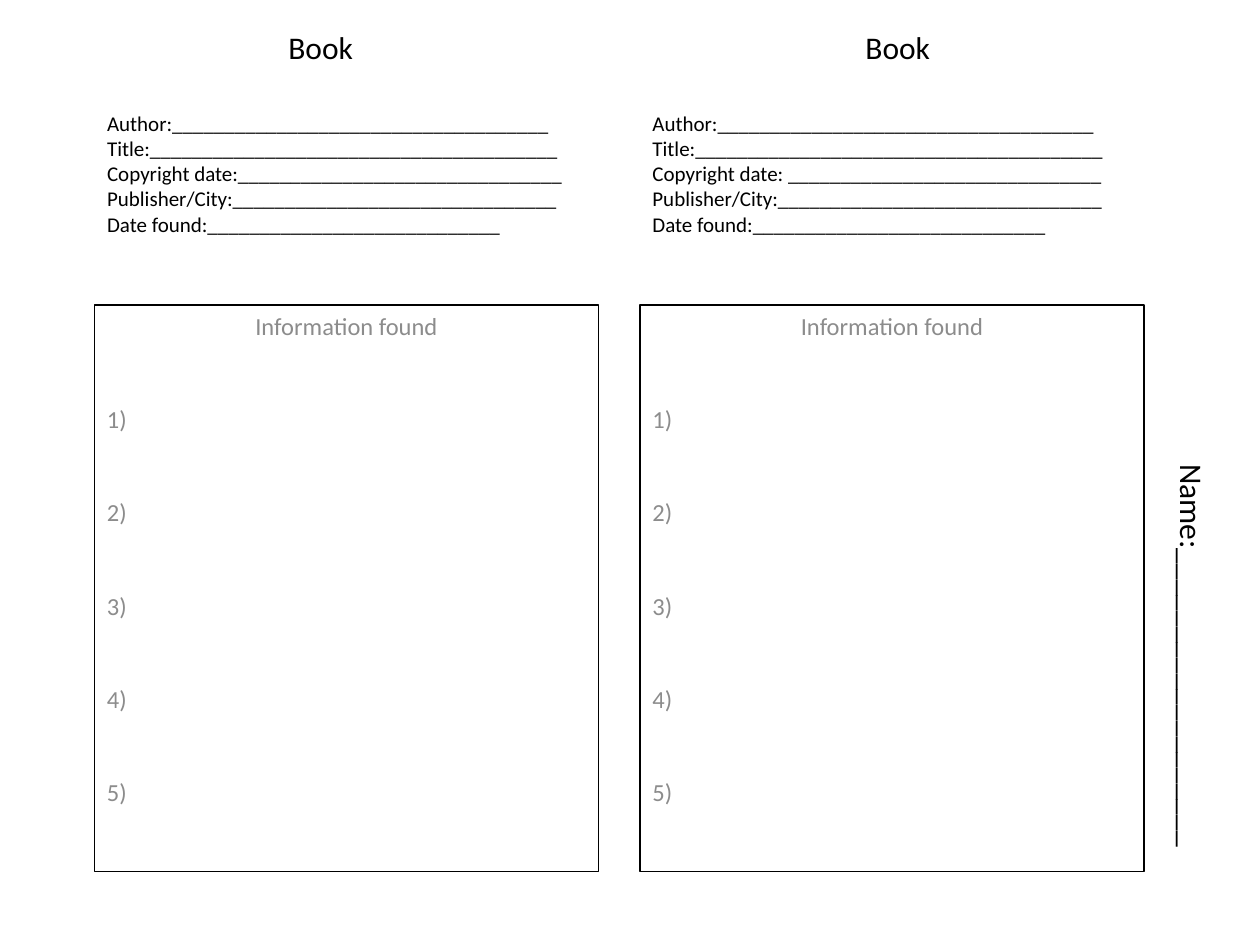
from pptx import Presentation
from pptx.dml.color import RGBColor
from pptx.enum.shapes import MSO_SHAPE
from pptx.enum.text import MSO_ANCHOR, MSO_AUTO_SIZE, PP_ALIGN
from pptx.util import Inches, Pt

BLACK = RGBColor(0x00, 0x00, 0x00)
GRAY = RGBColor(0x8C, 0x8C, 0x8C)
WHITE = RGBColor(0xFF, 0xFF, 0xFF)
FONT = "Calibri"

CARD_WIDTH = 4
FACT_COUNT = 5


def write_text(paragraph, text, size=12, color=BLACK, align=PP_ALIGN.LEFT,
               line_spacing=None, space_before=0):
    """Fill a paragraph; a line feed in the text becomes a line break."""
    paragraph.text = text.replace("\n", "\v")
    paragraph.alignment = align
    paragraph.space_before = Pt(space_before)
    if line_spacing:
        paragraph.line_spacing = line_spacing
    paragraph.font.name = FONT
    paragraph.font.size = Pt(size)
    paragraph.font.color.rgb = color


def source_fields(copyright_blank):
    """List the fill-in lines that identify a book."""
    return "\n".join([
        "Author:" + "_" * 36,
        "Title:" + "_" * 39,
        "Copyright date:" + copyright_blank,
        "Publisher/City:" + "_" * 31,
        "Date found:" + "_" * 28,
    ])


class Worksheet:
    """Holds the current slide and draws the worksheet parts on it."""

    def __init__(self, slide):
        self.slide = slide
        slide.background.fill.solid()
        slide.background.fill.fore_color.rgb = WHITE

    def text_box(self, text, left, top, width, height, rotation=0, **text_format):
        shape = self.slide.shapes.add_textbox(
            Inches(left), Inches(top), Inches(width), Inches(height))
        shape.rotation = rotation
        shape.text_frame.word_wrap = True
        write_text(shape.text_frame.paragraphs[0], text, **text_format)
        return shape

    def title(self, text, left, top, width, height):
        shape = self.slide.shapes.title
        shape.left, shape.top = Inches(left), Inches(top)
        shape.width, shape.height = Inches(width), Inches(height)
        shape.text_frame.auto_size = MSO_AUTO_SIZE.NONE
        shape.text_frame.vertical_anchor = MSO_ANCHOR.MIDDLE
        write_text(shape.text_frame.paragraphs[0], text)

    def information_box(self, left, top, width, height):
        shape = self.slide.shapes.add_shape(
            MSO_SHAPE.RECTANGLE, Inches(left), Inches(top), Inches(width), Inches(height))
        shape.shadow.inherit = False
        shape.fill.background()
        shape.line.color.rgb = BLACK
        shape.line.width = Pt(0.75)
        frame = shape.text_frame
        frame.word_wrap = True
        frame.vertical_anchor = MSO_ANCHOR.TOP
        write_text(frame.paragraphs[0], "Information found", size=14, color=GRAY,
                   align=PP_ALIGN.CENTER)
        for number in range(1, FACT_COUNT + 1):
            write_text(frame.add_paragraph(), f"{number})", size=14, color=GRAY,
                       line_spacing=3.0, space_before=2.8)


def main():
    presentation = Presentation()
    presentation.slide_width = Inches(10)
    presentation.slide_height = Inches(7.5)
    slide = presentation.slides.add_slide(presentation.slide_layouts[5])
    worksheet = Worksheet(slide)

    # Book details: the left block is the slide title
    left_card, right_card = 0.75, 5.08
    worksheet.title(source_fields("_" * 31), left_card, 0.5, CARD_WIDTH, 1.75)
    details = worksheet.text_box(source_fields(" " + "_" * 30),
                                 right_card, 0.5, CARD_WIDTH, 1.75)
    details.text_frame.vertical_anchor = MSO_ANCHOR.MIDDLE

    # Headings and note boxes of both cards
    for card_left, heading_left in ((left_card, 1.42), (right_card, 6)):
        worksheet.text_box("Book", heading_left, 0.17, 2.25, 0.4, size=18,
                           align=PP_ALIGN.CENTER)
        worksheet.information_box(card_left, 2.42, CARD_WIDTH, 4.5)

    # Name line along the right edge
    worksheet.text_box("Name:" + "_" * 19, 7.79, 5.04, 3.33, 0.42, rotation=90, size=18)

    presentation.save("out.pptx")


if __name__ == "__main__":
    main()
